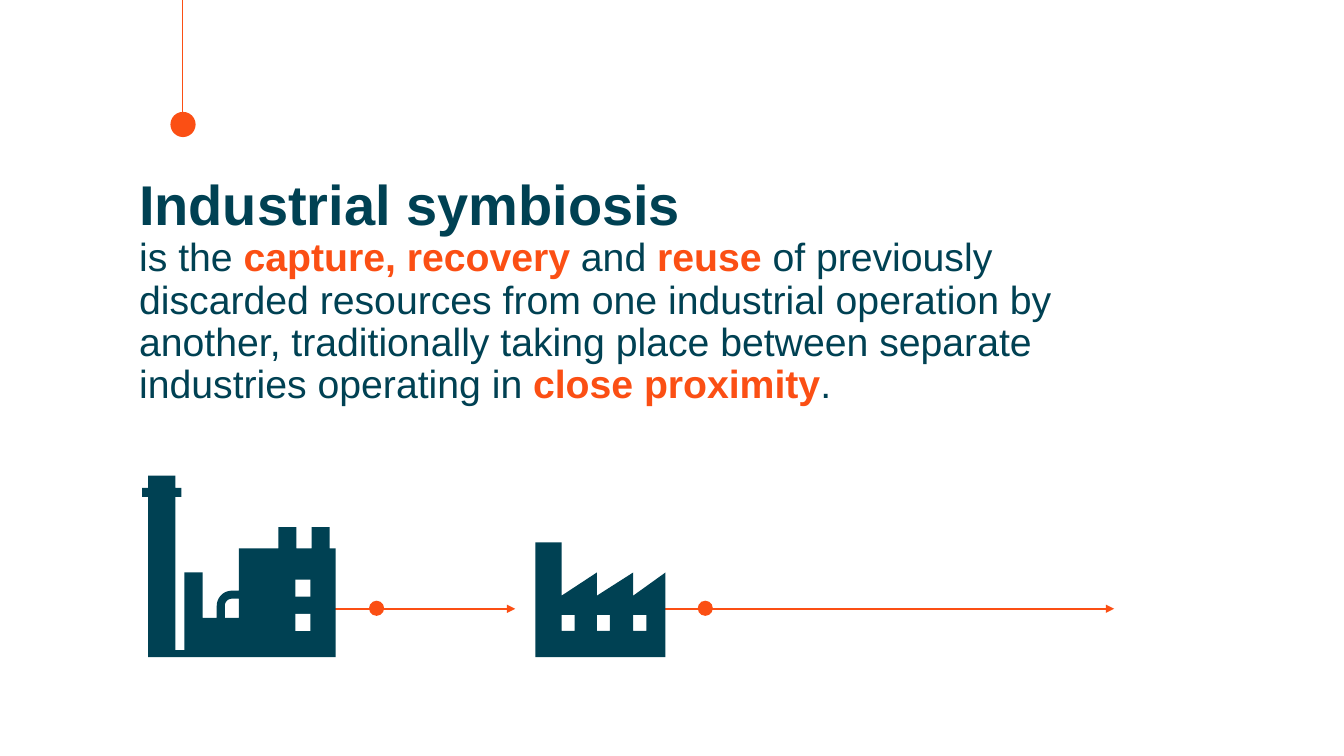
"""Build the industrial symbiosis slide with two linked factories."""
import math

from lxml import etree
from pptx import Presentation
from pptx import util as u
from pptx.dml.color import RGBColor
from pptx.enum import shapes, text
from pptx.oxml.ns import qn

COLORS = {"teal": "004153", "orange": "FB4F14", "white": "FFFFFF"}


def paint(item, color):
    item.shadow.inherit = False
    item.fill.solid()
    item.fill.fore_color.rgb = RGBColor.from_string(COLORS[color])
    item.line.fill.background()


def draw_outline(parent, contours):
    points = [[(u.Inches(x), u.Inches(y)) for x, y in contour] for contour in contours]
    builder = parent.build_freeform(*points[0][0], scale=1.0)
    builder.add_line_segments(points[0][1:], close=True)
    for hole in points[1:]:
        builder.move_to(*hole[0])
        builder.add_line_segments(hole[1:], close=True)
    paint(builder.convert_to_shape(), "teal")


prs = Presentation()
prs.slide_width, prs.slide_height = u.Inches(13.33), u.Inches(7.5)
slide = prs.slides.add_slide(prs.slide_layouts[5])

definition = slide.shapes.title
definition.left, definition.top = u.Inches(1.28), u.Inches(1.71)
definition.width, definition.height = u.Inches(9.28), u.Inches(2.46)
frame = definition.text_frame
frame_format = {
    "word_wrap": True,
    "auto_size": text.MSO_AUTO_SIZE.NONE,
    "vertical_anchor": text.MSO_ANCHOR.TOP,
    "margin_left": u.Inches(0.1),
    "margin_right": u.Inches(0.1),
    "margin_top": u.Inches(0.05),
    "margin_bottom": u.Inches(0.05),
}
for name, value in frame_format.items():
    setattr(frame, name, value)

sentence = frame.paragraphs[0]
sentence.alignment = text.PP_ALIGN.LEFT
sentence.line_spacing = 0.9
phrases = [
    ("Industrial symbiosis ", 40, "teal", True),
    ("is the ", 28, "teal", False),
    ("capture, recovery ", 28, "orange", True),
    ("and ", 28, "teal", False),
    ("reuse ", 28, "orange", True),
    ("of previously discarded resources from one industrial operation by another, "
     "traditionally taking place between separate industries operating in ", 28, "teal", False),
    ("close proximity", 28, "orange", True),
    (".", 28, "teal", False),
]
for index, (words, size, color, bold) in enumerate(phrases):
    if index == 1:
        sentence.add_line_break()
    run = sentence.add_run()
    run.text = words
    font_format = {"name": "Arial", "size": u.Pt(size), "bold": bold}
    for name, value in font_format.items():
        setattr(run.font, name, value)
    run.font.color.rgb = RGBColor.from_string(COLORS[color])

flows = [
    (6.43, 6.04, 11.05, 6.04, 1.75, True),
    (3.19, 6.04, 5.11, 6.04, 1.75, True),
    (1.81, 0, 1.81, 1.27, 1, False),
]
for x1, y1, x2, y2, weight, arrow in flows:
    flow = slide.shapes.add_connector(
        shapes.MSO_CONNECTOR.STRAIGHT, *(u.Inches(v) for v in (x1, y1, x2, y2)))
    flow.line.color.rgb = RGBColor.from_string(COLORS["orange"])
    flow.line.width = u.Pt(weight)
    properties = flow._element.spPr
    if arrow:
        etree.SubElement(properties.find(qn("a:ln")), qn("a:tailEnd"), type="triangle")
    etree.SubElement(properties, qn("a:effectLst"))

for left, top, diameter in [(3.66, 5.96, 0.15), (6.92, 5.96, 0.15), (1.69, 1.11, 0.25)]:
    dot = slide.shapes.add_shape(
        shapes.MSO_SHAPE.OVAL, *(u.Inches(v) for v in (left, top, diameter, diameter)))
    paint(dot, "orange")

pipe_x, pipe_y = 2.3, 6.01
bends = {
    radius: [(pipe_x - radius * math.sin(math.radians(a)),
              pipe_y - radius * math.cos(math.radians(a))) for a in range(0, 91, 10)]
    for radius in (0.15, 0.07)
}
plant = slide.shapes.add_group_shape()
draw_outline(plant.shapes, [
    [(3.27, 5.44), (3.27, 5.23), (3.09, 5.23), (3.09, 5.44), (2.94, 5.44), (2.94, 5.23),
     (2.76, 5.23), (2.76, 5.44), (2.37, 5.44), (2.37, 5.86), *bends[0.15], (2.15, 6.13),
     (2.01, 6.13), (2.01, 5.68), (1.83, 5.68), (1.83, 6.45), (1.74, 6.45), (1.74, 4.93),
     (1.8, 4.93), (1.8, 4.84), (1.74, 4.84), (1.74, 4.72), (1.47, 4.72), (1.47, 4.84),
     (1.41, 4.84), (1.41, 4.93), (1.47, 4.93), (1.47, 6.52), (3.33, 6.52), (3.33, 5.44)],
    [(2.37, 6.13), (2.37, 5.94), *bends[0.07], (2.23, 6.13)],
])
for top in (5.75, 6.09):
    window = plant.shapes.add_shape(
        shapes.MSO_SHAPE.RECTANGLE, *(u.Inches(v) for v in (2.93, top, 0.15, 0.17)))
    paint(window, "white")

openings = [[(x + 0.13, 6.1), (x, 6.1), (x, 6.26), (x + 0.13, 6.26)]
            for x in (5.57, 5.92, 6.28)]
draw_outline(slide.shapes, [
    [(6.6, 5.68), (6.6, 6.52), (5.31, 6.52), (5.31, 5.38), (5.57, 5.38),
     (5.57, 5.91), (5.92, 5.68), (5.92, 5.91), (6.28, 5.68), (6.28, 5.91)],
    *openings,
])

prs.save("out.pptx")
